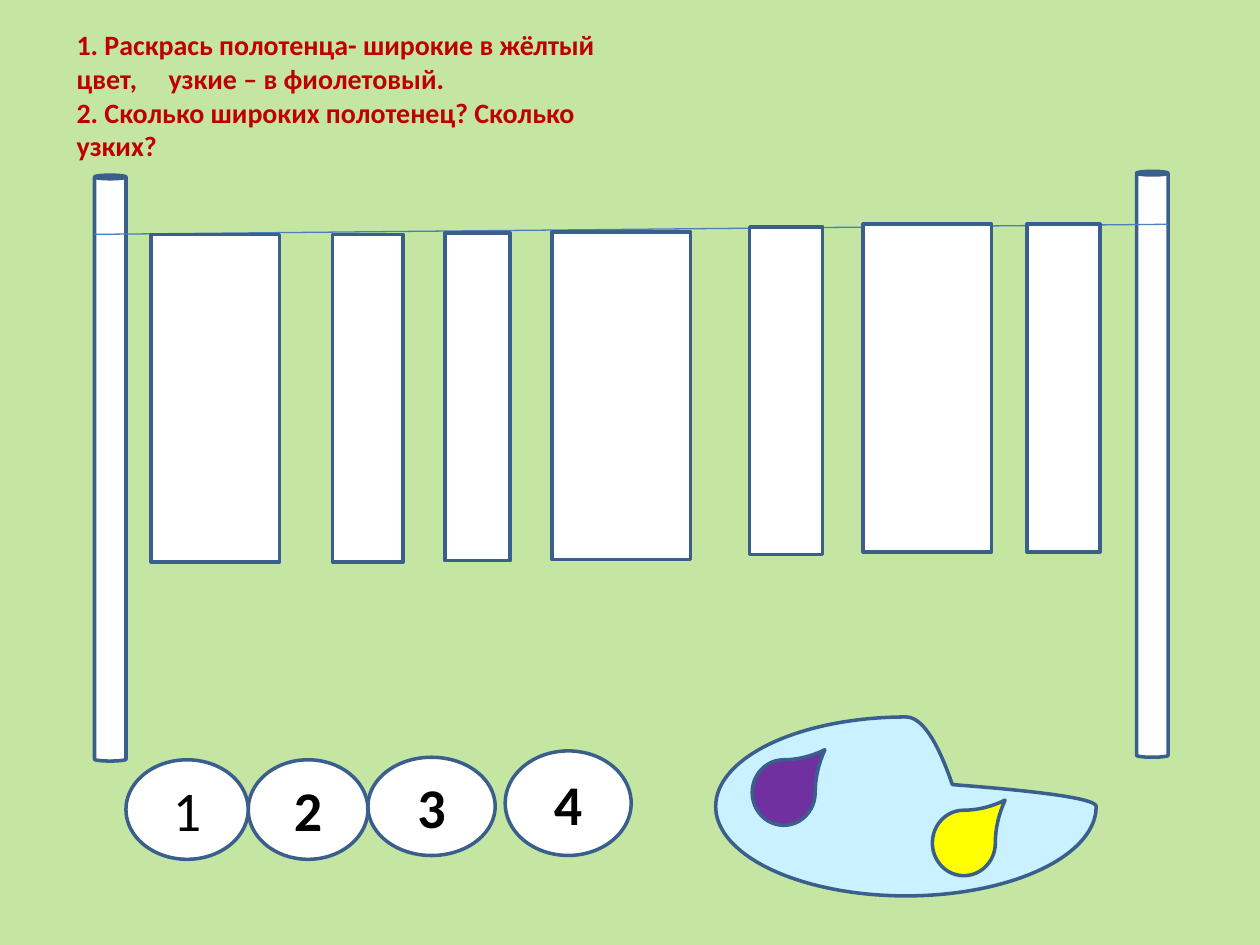
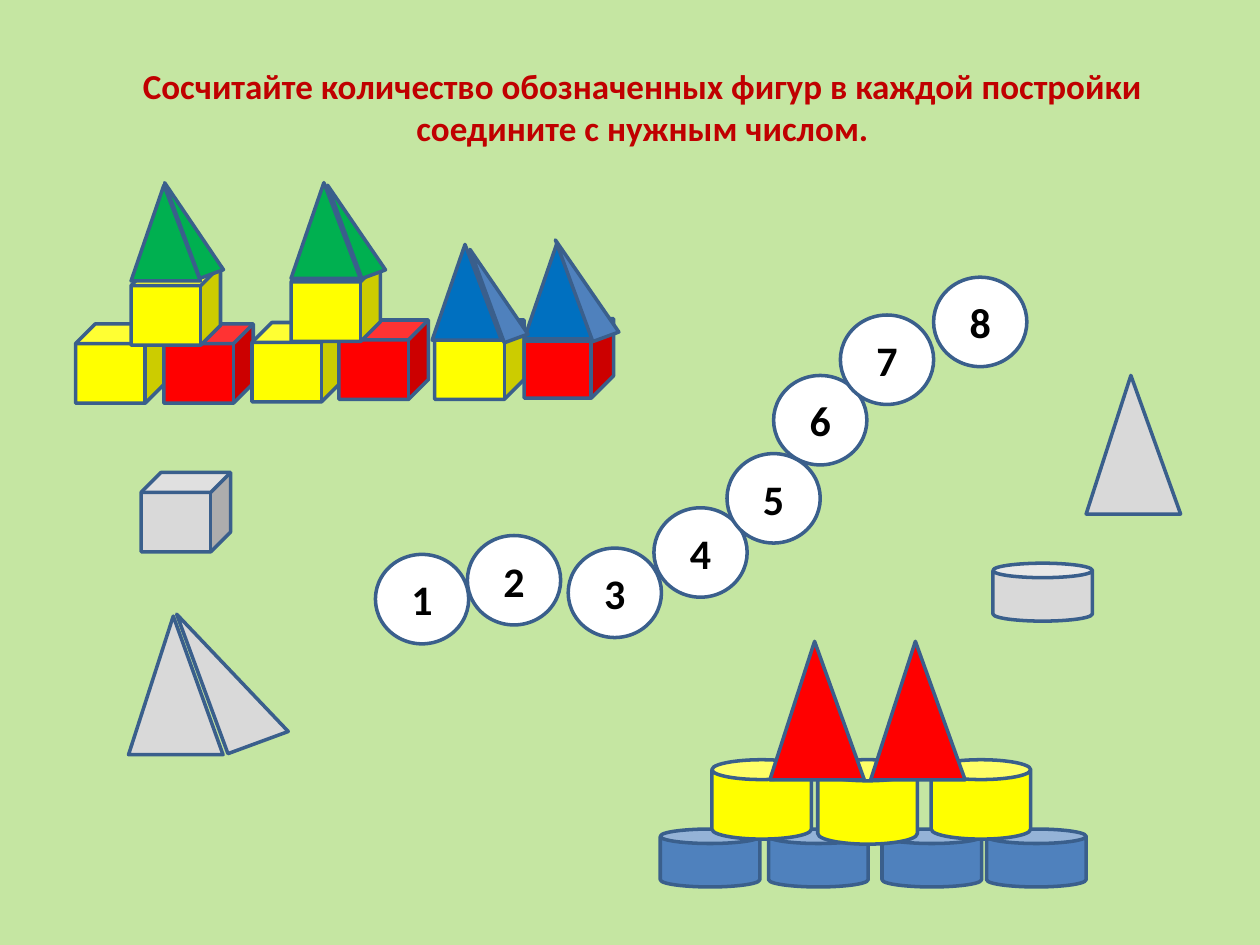
from dataclasses import dataclass

from lxml import etree
from pptx import Presentation
from pptx import util as u
from pptx.dml.color import RGBColor
from pptx.enum import shapes, text
from pptx.oxml import ns

# Shared colours and font
FONT = "Calibri"
BACKGROUND = RGBColor(0xC5, 0xE6, 0xA2)
OUTLINE = RGBColor(0x3A, 0x5F, 0x8C)
ROPE = RGBColor(0x4B, 0x7E, 0xBC)
TITLE = RGBColor(0xC0, 0x00, 0x00)
BLACK = RGBColor(0x00, 0x00, 0x00)
WHITE = RGBColor(0xFF, 0xFF, 0xFF)
GREY = RGBColor(0xD9, 0xD9, 0xD9)
YELLOW = RGBColor(0xFF, 0xFF, 0x00)
RED = RGBColor(0xFF, 0x00, 0x00)
GREEN = RGBColor(0x00, 0xB0, 0x50)
BLUE = RGBColor(0x00, 0x70, 0xC0)
STEEL = RGBColor(0x4F, 0x81, 0xBD)
PURPLE = RGBColor(0x70, 0x30, 0xA0)
PALETTE = RGBColor(0xC9, 0xF1, 0xFF)

KIND = shapes.MSO_SHAPE
CENTER = text.PP_ALIGN.CENTER
PYRAMID_TURN = 339.8


@dataclass
class Figure:
    kind: KIND
    left: float
    top: float
    width: float
    height: float
    fill: RGBColor = WHITE
    adjust: float | None = None
    turn: float = 0


# Building blocks of one kind share their size and proportions
def towel(left: float, top: float, width: float) -> Figure:
    return Figure(KIND.RECTANGLE, left, top, width, 2.6)


def pole(left: float, top: float) -> Figure:
    return Figure(KIND.CAN, left, top, 0.25, 4.65, adjust=0.115)


def paint_drop(left: float, top: float, fill: RGBColor) -> Figure:
    return Figure(KIND.TEAR, left, top, 0.5, 0.52, fill, 1.308)


def cube(left: float, top: float, fill: RGBColor, depth: float = 0.25) -> Figure:
    return Figure(KIND.CUBE, left, top, 0.71, 0.63, fill, depth)


def drum(left: float, top: float, fill: RGBColor, height: float = 0.46) -> Figure:
    return Figure(KIND.CAN, left, top, 0.79, height, fill)


def cone(left: float, top: float, fill: RGBColor) -> Figure:
    return Figure(KIND.ISOSCELES_TRIANGLE, left, top, 0.75, 1.1, fill, 0.474)


def roof(left: float, top: float, fill: RGBColor) -> Figure:
    return Figure(KIND.ISOSCELES_TRIANGLE, left, top, 0.55, 0.76, fill, 0.474)


def roof_side(left: float, top: float, width: float, height: float,
              fill: RGBColor) -> Figure:
    return Figure(KIND.RIGHT_TRIANGLE, left, top, width, height, fill,
                  turn=PYRAMID_TURN)


def draw(page, figure: Figure):
    shape = page.shapes.add_shape(
        figure.kind, u.Inches(figure.left), u.Inches(figure.top),
        u.Inches(figure.width), u.Inches(figure.height))
    shape.shadow.inherit = False
    shape.rotation = figure.turn
    shape.fill.solid()
    shape.fill.fore_color.rgb = figure.fill
    shape.line.color.rgb = OUTLINE
    shape.line.width = u.Pt(2)
    if figure.adjust is not None:
        shape.adjustments[0] = figure.adjust
    return shape


def draw_all(page, figures: list[Figure]) -> None:
    for figure in figures:
        draw(page, figure)


def write(box, words: str, *, size: float, color: RGBColor = BLACK,
          bold: bool = True, align=CENTER) -> None:
    frame = box.text_frame
    frame.word_wrap = True
    frame.vertical_anchor = text.MSO_ANCHOR.MIDDLE
    frame.text = words
    for para in frame.paragraphs:
        para.alignment = align
        for span in para.runs:
            span.font.name = FONT
            span.font.size = u.Pt(size)
            span.font.bold = bold
            span.font.color.rgb = color


def add_title(page, words: str, left: float, top: float, **style):
    box = page.shapes.add_textbox(u.Inches(left), u.Inches(top),
                                  u.Inches(9), u.Inches(1.25))
    write(box, words, color=TITLE, **style)
    return box


def set_columns(box, count: int, tab: float) -> None:
    body = box.element.txBody
    body.bodyPr.set("numCol", str(count))
    for para in body.p_lst:
        stops = etree.SubElement(para.get_or_add_pPr(), ns.qn("a:tabLst"))
        etree.SubElement(stops, ns.qn("a:tab"), pos=str(u.Inches(tab)), algn="l")


def add_number(page, label: str, left: float, top: float, width: float,
               height: float, **style) -> None:
    oval = draw(page, Figure(KIND.OVAL, left, top, width, height))
    write(oval, label, **style)


def add_rope(page) -> None:
    rope = page.shapes.add_connector(
        shapes.MSO_CONNECTOR.STRAIGHT, u.Inches(0.75), u.Inches(1.86),
        u.Inches(9.27), u.Inches(1.78))
    rope.line.color.rgb = ROPE
    rope.line.width = u.Pt(0.75)
    etree.SubElement(rope.element.spPr, ns.qn("a:effectLst"))


def add_page(deck):
    page = deck.slides.add_slide(deck.slide_layouts[6])
    page.background.fill.solid()
    page.background.fill.fore_color.rgb = BACKGROUND
    return page


def build_towels(deck) -> None:
    page = add_page(deck)
    # Answers, from back to front
    for label, left, top, width, height in [
            ("4", 4.01, 5.96, 1, 0.83), ("3", 2.92, 6.01, 1.01, 0.78),
            ("2", 1.97, 6.03, 0.95, 0.79), ("1", 1, 6.03, 0.97, 0.79)]:
        add_number(page, label, left, top, width, height,
                   size=32, bold=label != "1")
    title = add_title(
        page, "1. Раскрась полотенца- широкие в жёлтый цвет,\tузкие – в фиолетовый.\n"
        "2. Сколько широких полотенец? Сколько узких?",
        0.51, 0.13, size=16, align=text.PP_ALIGN.LEFT)
    set_columns(title, 2, tab=0.73)

    # Washing line
    draw_all(page, [pole(0.75, 1.39), pole(9.02, 1.36)])
    add_rope(page)
    draw_all(page, [
        towel(1.2, 1.86, 1.02), towel(4.38, 1.84, 1.1), towel(6.85, 1.78, 1.02),
        towel(2.64, 1.86, 0.56), towel(3.53, 1.85, 0.52),
        towel(5.95, 1.8, 0.58), towel(8.15, 1.78, 0.58)])

    # Paint palette
    draw_all(page, [
        Figure(KIND.TEAR, 5.68, 5.69, 3.02, 1.42, PALETTE, 0.244),
        paint_drop(7.4, 6.43, YELLOW), paint_drop(5.97, 6.03, PURPLE)])


def build_blocks(deck) -> None:
    page = add_page(deck)
    add_title(page, "Сосчитайте количество обозначенных фигур в каждой постройки "
              "соедините с нужным числом.", 0.6, 0.22, size=20)

    # Castle of cubes and pyramids
    draw_all(page, [
        cube(0.6, 2.57, YELLOW), cube(1.3, 2.57, RED),
        cube(2, 2.56, YELLOW), cube(2.69, 2.54, RED),
        cube(3.45, 2.54, YELLOW), cube(4.16, 2.53, RED, 0.281),
        cube(1.04, 2.11, YELLOW), cube(2.31, 2.08, YELLOW),
        roof(1.04, 1.47, GREEN), roof_side(1.44, 1.39, 0.2, 0.81, GREEN),
        roof(2.31, 1.45, GREEN), roof_side(2.73, 1.41, 0.2, 0.79, GREEN),
        roof(3.43, 1.94, BLUE), roof(4.16, 1.93, BLUE),
        roof_side(4.55, 1.84, 0.22, 0.86, STEEL),
        roof_side(3.86, 1.92, 0.2, 0.79, STEEL)])

    # Castle of drums and cones
    draw_all(page, [drum(left, 6.58, STEEL) for left in (7.83, 7, 6.1, 5.24)])
    draw_all(page, [drum(left, 6.03, YELLOW, height) for left, height in
                    [(7.39, 0.63), (6.49, 0.67), (5.65, 0.63)]])
    draw_all(page, [cone(left, 5.09, RED) for left in (6.11, 6.91)])

    # Shapes to count
    draw_all(page, [
        cube(1.12, 3.75, GREY), cone(1.02, 4.89, GREY),
        roof_side(1.59, 4.75, 0.51, 1.18, GREY),
        cone(8.62, 2.98, GREY), drum(7.88, 4.47, GREY)])

    # Number trail
    for label, left, top in [
            ("2", 3.71, 4.25), ("1", 2.98, 4.4), ("3", 4.51, 4.35),
            ("4", 5.19, 4.03), ("5", 5.77, 3.6), ("6", 6.14, 2.98),
            ("7", 6.67, 2.5), ("8", 7.41, 2.2)]:
        add_number(page, label, left, top, 0.74, 0.71, size=24)


def main() -> None:
    deck = Presentation()
    deck.slide_width, deck.slide_height = u.Inches(10), u.Inches(7.5)
    build_towels(deck)
    build_blocks(deck)
    deck.save("out.pptx")


if __name__ == "__main__":
    main()
